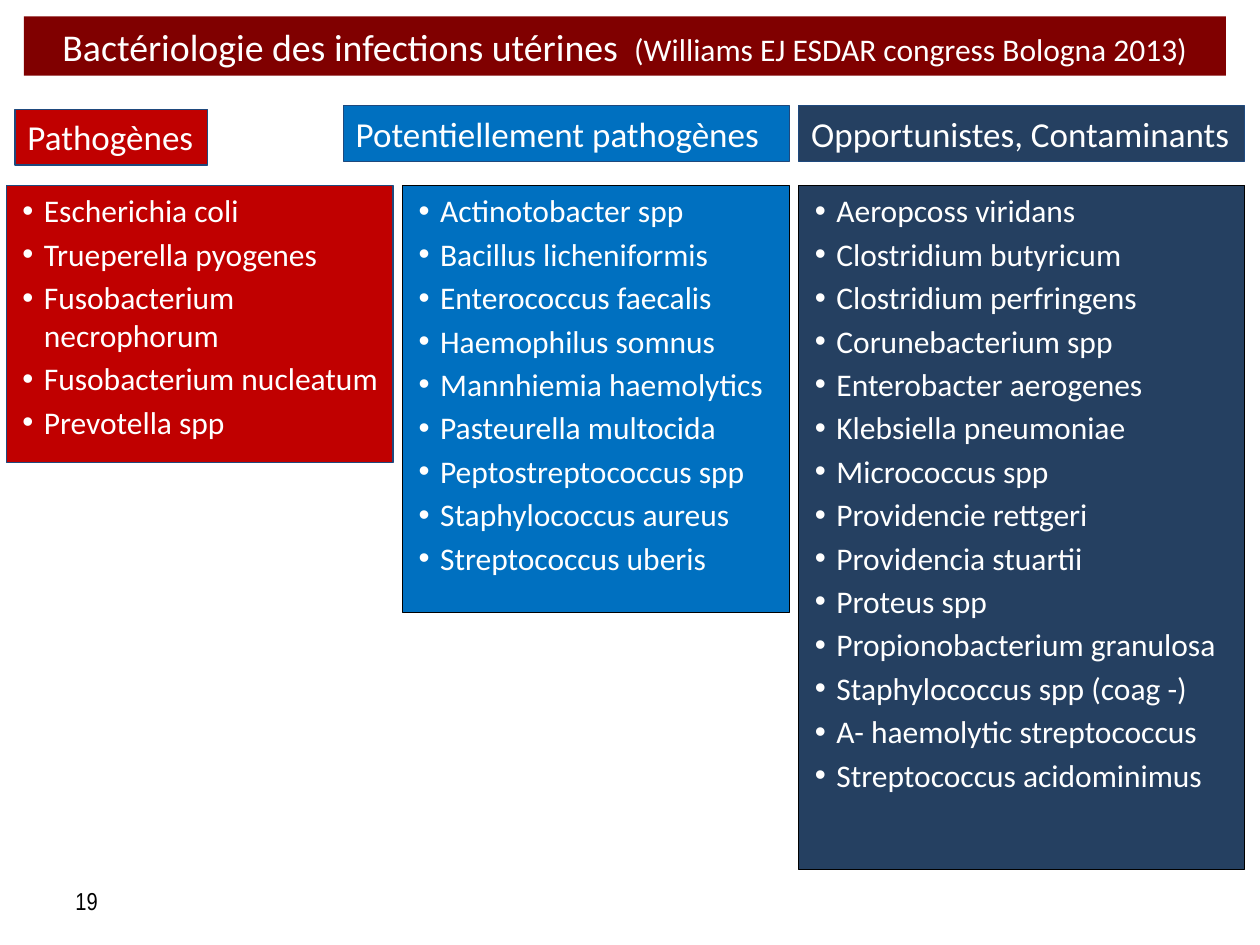
"""Build a slide that sorts uterine bacteria into three groups."""
import pptx
import pptx.util
import pptx.dml.color
import pptx.enum.shapes
import pptx.enum.text
import lxml.etree

TITLE = (("Bactériologie des infections utérines ", 21.6),
         (" (Williams EJ ESDAR congress Bologna 2013)", 18))
PAGE = "19"
GROUPS = [
    {"head": "Pathogènes", "fill": "C00000", "edge": "1F497D",
     "wide": 3.07, "tall": 2.2, "tab": (0.07, 0.87, 1.53), "wrap": False,
     "items": ["Escherichia coli", "Trueperella pyogenes",
               "Fusobacterium necrophorum", "Fusobacterium nucleatum",
               "Prevotella spp"]},
    {"head": "Potentiellement pathogènes", "fill": "0070C0", "edge": "000000",
     "wide": 3.07, "tall": 3.39, "tab": (-0.47, 0.84, 3.54), "wrap": True,
     "items": ["Actinotobacter spp", "Bacillus licheniformis",
               "Enterococcus faecalis", "Haemophilus somnus",
               "Mannhiemia haemolytics", "Pasteurella multocida",
               "Peptostreptococcus spp", "Staphylococcus aureus",
               "Streptococcus uberis"]},
    {"head": "Opportunistes, Contaminants", "fill": "254061", "edge": "000000",
     "wide": 3.54, "tall": 5.43, "tab": (0, 0.84, 3.54), "wrap": True,
     "items": ["Aeropcoss viridans", "Clostridium butyricum",
               "Clostridium perfringens", "Corunebacterium spp",
               "Enterobacter aerogenes", "Klebsiella pneumoniae",
               "Micrococcus spp", "Providencie rettgeri",
               "Providencia stuartii", "Proteus spp",
               "Propionobacterium granulosa", "Staphylococcus spp (coag -)",
               "A- haemolytic streptococcus", "Streptococcus acidominimus"]},
]
THEME = {"font": "Calibri", "ink": "FFFFFF", "title": "800000",
         "edge": "1F497D", "head": 20, "body": 18, "line": 0.75, "before": 3.2,
         "page": ("Arial Narrow", 14, "000000")}
LEFT, TOP, GAP, TAB = 0.05, 1.47, 0.075, 0.44

inch, pt = pptx.util.Inches, pptx.util.Pt
align, anchor = pptx.enum.text.PP_ALIGN, pptx.enum.text.MSO_ANCHOR


def tint(code):
    return pptx.dml.color.RGBColor.from_string(code)


def style(font, size, name=THEME["font"], ink=THEME["ink"]):
    font.name, font.size = name, pt(size)
    font.color.rgb = tint(ink)


def panel(slide, spot, fill, edge=None):
    box = slide.shapes.add_shape(pptx.enum.shapes.MSO_SHAPE.RECTANGLE,
                                 *map(inch, spot))
    box.shadow.inherit = False
    box.fill.solid()
    box.fill.fore_color.rgb = tint(fill)
    if edge:
        box.line.color.rgb = tint(edge)
        box.line.width = pt(THEME["line"])
    else:
        box.line.fill.background()
    frame = box.text_frame
    frame.word_wrap = True
    frame.vertical_anchor = anchor.TOP
    frame.paragraphs[0].alignment = align.LEFT
    return frame


def bullet(para):
    props = para._p.get_or_add_pPr()
    props.set("marL", str(inch(0.2)))
    props.set("indent", str(inch(-0.17)))
    for tag, key, value in (("a:buFont", "typeface", "Arial"),
                            ("a:buChar", "char", "•")):
        mark = lxml.etree.SubElement(props, pptx.oxml.ns.qn(tag))
        mark.set(key, value)


def column(slide, left, group):
    spot = (left, TOP, group["wide"], group["tall"])
    frame = panel(slide, spot, group["fill"], group["edge"])
    for rank, name in enumerate(group["items"]):
        para = frame.add_paragraph() if rank else frame.paragraphs[0]
        para.text = name
        para.alignment = align.LEFT
        para.space_before = pt(THEME["before"])
        bullet(para)
        style(para.font, THEME["body"])


def header(slide, left, group):
    shift, top, wide = group["tab"]
    frame = panel(slide, (left + shift, top, wide, TAB),
                  group["fill"], THEME["edge"])
    frame.word_wrap = group["wrap"]
    frame.auto_size = pptx.enum.text.MSO_AUTO_SIZE.SHAPE_TO_FIT_TEXT
    para = frame.paragraphs[0]
    para.text = group["head"]
    style(para.font, THEME["head"])


def main():
    deck = pptx.Presentation()
    deck.slide_width, deck.slide_height = inch(10), inch(7.5)
    slide = deck.slides.add_slide(deck.slide_layouts[6])

    frame = panel(slide, (0.19, 0.13, 9.54, 0.47), THEME["title"])
    frame.vertical_anchor = anchor.MIDDLE
    para = frame.paragraphs[0]
    para.alignment = align.CENTER
    for text, size in TITLE:
        run = para.add_run()
        run.text = text
        style(run.font, size)

    left = LEFT
    for group in GROUPS:
        column(slide, left, group)
        header(slide, left, group)
        left += group["wide"] + GAP

    note = slide.shapes.add_textbox(*map(inch, (0.5, 6.95, 2.33, 0.4)))
    frame = note.text_frame
    frame.word_wrap = True
    frame.vertical_anchor = anchor.MIDDLE
    para = frame.paragraphs[0]
    para.text = PAGE
    name, size, ink = THEME["page"]
    style(para.font, size, name, ink)
    deck.save("out.pptx")


if __name__ == "__main__":
    main()
